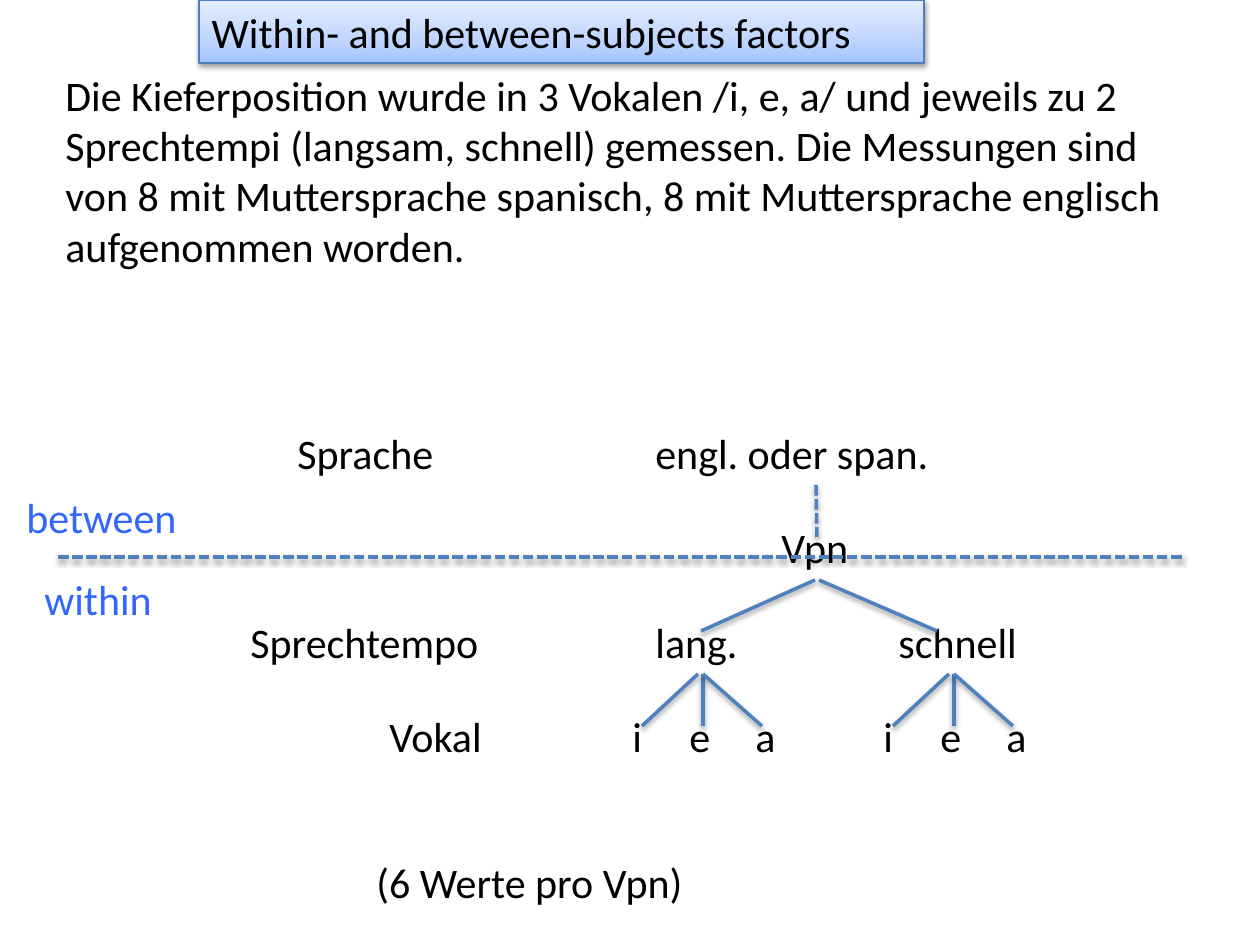
from lxml import etree
from pptx import Presentation
from pptx.dml.color import RGBColor
from pptx.enum.dml import MSO_LINE as Dash
from pptx.enum.shapes import MSO_CONNECTOR as Conn
from pptx.enum.text import MSO_ANCHOR as Anchor, MSO_AUTO_SIZE as Fit, PP_ALIGN as Align
from pptx.oxml import parse_xml
from pptx.oxml.ns import nsdecls, qn
from pptx.util import Pt

PX = 914400 / 126
BLACK, BLUE, LINE = "000000", "3366FF", "4F81BD"
ROW = 63  # height of one line of text


def px(n):
    return round(n * PX)


def color(code):
    return RGBColor.from_string(code)


def place(shape, x, y, w, h):
    shape.left, shape.top, shape.width, shape.height = map(px, (x, y, w, h))


def add_shadow(shape):
    props = shape._element.spPr
    for old in props.findall(qn("a:effectLst")):
        props.remove(old)
    effect = etree.SubElement(props, qn("a:effectLst"))
    effect.append(parse_xml(
        f'<a:outerShdw {nsdecls("a")} blurRad="40000" dist="20000" dir="5400000" rotWithShape="0">'
        '<a:srgbClr val="000000"><a:alpha val="38000"/></a:srgbClr></a:outerShdw>'))


def fill_fade(shape, stops, angle):
    marks = "".join(f'<a:gs pos="{pos * 1000}"><a:srgbClr val="{code}"/></a:gs>'
                    for pos, code in stops)
    shape._element.spPr.append(parse_xml(
        f'<a:gradFill {nsdecls("a")} rotWithShape="1"><a:gsLst>{marks}</a:gsLst>'
        f'<a:lin ang="{angle * 60000}" scaled="0"/></a:gradFill>'))


def write(shape, text, wrap, code=BLACK, fit=Fit.SHAPE_TO_FIT_TEXT):
    frame = shape.text_frame
    frame.text = text
    frame.word_wrap = wrap
    frame.auto_size = fit
    frame.vertical_anchor = Anchor.TOP
    para = frame.paragraphs[0]
    para.alignment = Align.LEFT
    para.font.name, para.font.size = "Calibri", Pt(24)
    para.font.color.rgb = color(code)


def add_title(slide, text):
    title = slide.shapes.title
    place(title, 199, 0, 725, ROW)
    fill_fade(title, [(0, "A4C4FF"), (35, "BFD4FF"), (100, "E6EEFF")], 270)
    title.line.color.rgb = color("4B7EBC")
    title.line.width = Pt(0.75)
    add_shadow(title)
    # A fixed size keeps the box at one row, clear of the task below
    write(title, text, True, fit=Fit.NONE)


def add_text(slide, text, x, y, w, h=ROW, wrap=False, code=BLACK):
    box = slide.shapes.add_textbox(px(x), px(y), px(w), px(h))
    write(box, text, wrap, code)


def add_line(slide, x1, y1, x2, y2, dash=None):
    line = slide.shapes.add_connector(Conn.STRAIGHT, px(x1), px(y1), px(x2), px(y2))
    line.line.color.rgb = color(LINE)
    line.line.width = Pt(2)
    if dash:
        line.line.dash_style = dash
    add_shadow(line)


def add_vowels(slide, x):
    """Three vowels under one tempo, with the branches that lead to them."""
    for text, dx, w in [("i", 0, 35), ("e", 57, 47), ("a", 123, 45)]:
        add_text(slide, text, x + dx, 704, w)
    for top, end in [(83, 83), (78, 22), (83, 142)]:
        add_line(slide, x + top, 674, x + end, 726)


def main():
    deck = Presentation()
    deck.slide_width, deck.slide_height = px(1260), px(945)
    slide = deck.slides.add_slide(deck.slide_layouts[5])

    # Title and task
    add_title(slide, "Within- and between-subjects factors")
    add_text(slide, "Die Kieferposition wurde in 3 Vokalen /i, e, a/ und jeweils zu 2 "
             "Sprechtempi (langsam, schnell) gemessen. Die Messungen sind von 8 mit "
             "Muttersprache spanisch, 8 mit Muttersprache englisch aufgenommen worden.",
             53, 63, 1166, 217, wrap=True)

    # Factor names
    for text, x, y, w in [("Sprache", 285, 421, 164),
                          ("Sprechtempo", 238, 610, 257),
                          ("Vokal", 377, 704, 121)]:
        add_text(slide, text, x, y, w)

    # Tree of levels
    add_text(slide, "engl. oder span.", 643, 421, 352, wrap=True)
    add_text(slide, "Vpn", 769, 515, 95)
    add_text(slide, "lang.", 643, 610, 108)
    add_text(slide, "schnell", 886, 610, 145)
    for x in (620, 871):
        add_vowels(slide, x)
    add_line(slide, 701, 631, 815, 580)
    add_line(slide, 937, 631, 819, 580)
    add_line(slide, 816, 485, 817, 537, Dash.SQUARE_DOT)

    # Border of between and within
    add_text(slide, "between", 14, 485, 178, code=BLUE)
    add_text(slide, "within", 32, 567, 136, code=BLUE)
    add_line(slide, 58, 557, 1182, 557, Dash.SQUARE_DOT)

    # Count
    add_text(slide, "(6 Werte pro Vpn)", 364, 850, 441, wrap=True)

    deck.save("out.pptx")


if __name__ == "__main__":
    main()
